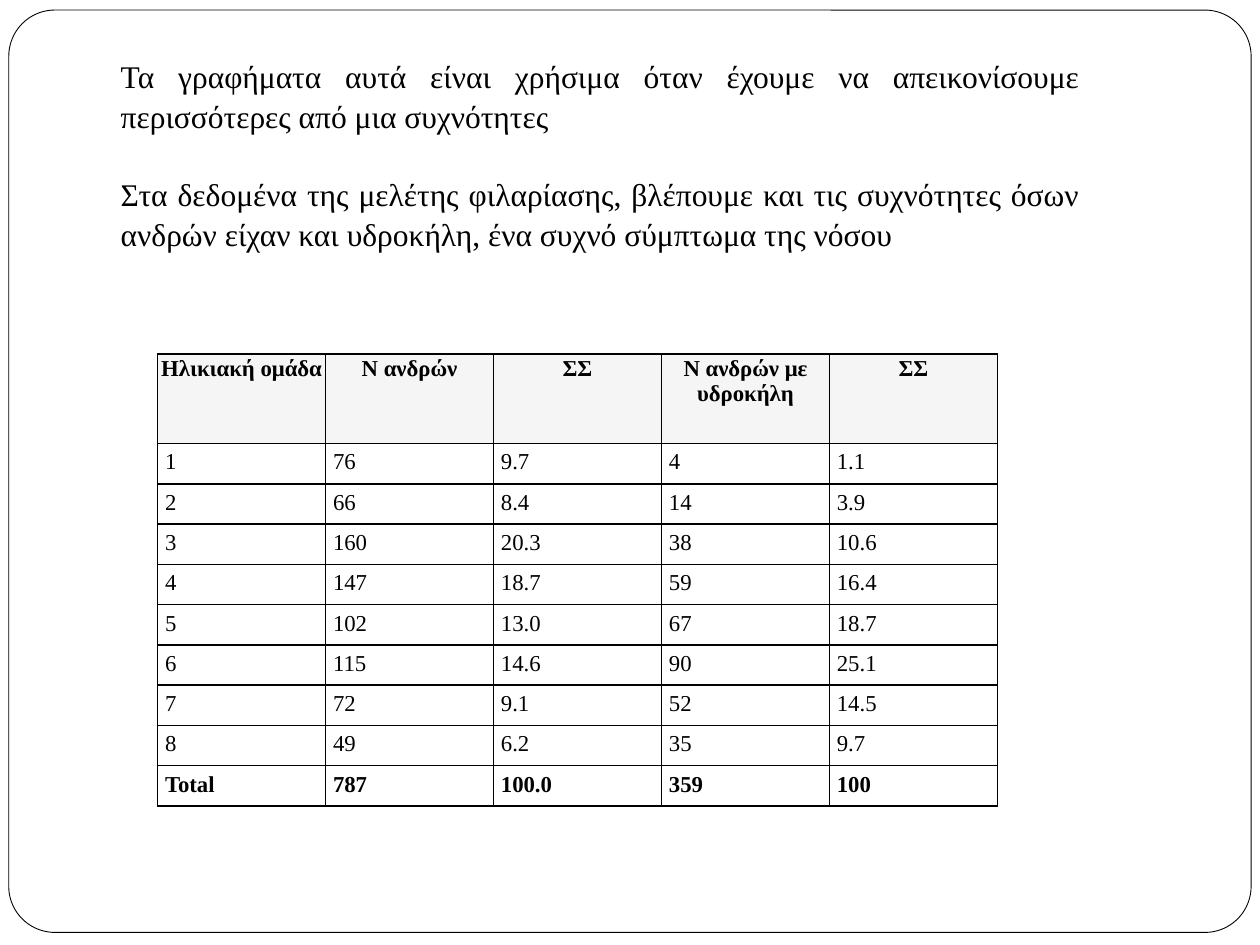
from lxml import etree
from pptx import Presentation, util as u
from pptx.dml.color import RGBColor
from pptx.enum import shapes, text
from pptx.oxml.ns import qn

INTRO = [
    "Τα γραφήματα αυτά είναι χρήσιμα όταν έχουμε να απεικονίσουμε περισσότερες από μια συχνότητες",
    "Στα δεδομένα της μελέτης φιλαρίασης, βλέπουμε και τις συχνότητες όσων ανδρών είχαν "
    "και υδροκήλη, ένα συχνό σύμπτωμα της νόσου",
]
ROWS = [
    ("Ηλικιακή ομάδα", "Ν ανδρών", "ΣΣ", "Ν ανδρών με υδροκήλη", "ΣΣ"),
    ("1", "76", "9.7", "4", "1.1"),
    ("2", "66", "8.4", "14", "3.9"),
    ("3", "160", "20.3", "38", "10.6"),
    ("4", "147", "18.7", "59", "16.4"),
    ("5", "102", "13.0", "67", "18.7"),
    ("6", "115", "14.6", "90", "25.1"),
    ("7", "72", "9.1", "52", "14.5"),
    ("8", "49", "6.2", "35", "9.7"),
    ("Total", "787", "100.0", "359", "100"),
]
FONT = "Times New Roman"
BLACK = RGBColor(0, 0, 0)
WHITE = RGBColor(0xFF, 0xFF, 0xFF)
HEADER_GREY = RGBColor(0xF5, 0xF5, 0xF5)

prs = Presentation()
prs.slide_width, prs.slide_height = u.Inches(10), u.Inches(7.5)
s = prs.slides.add_slide(prs.slide_layouts[6])


def write(p, content, size, bold=False, align=text.PP_ALIGN.LEFT, spacing=None, before=0):
    p.alignment = align
    p.line_spacing = spacing
    p.space_before = u.Pt(before)
    r = p.add_run()
    r.text = content
    r.font.name, r.font.size, r.font.bold = FONT, u.Pt(size), bold
    r.font.color.rgb = BLACK


def add_borders(cell, width=1):
    tcPr = cell._tc.get_or_add_tcPr()
    for i, side in enumerate(("lnL", "lnR", "lnT", "lnB")):
        ln = etree.Element(qn(f"a:{side}"), w=str(u.Pt(width)))
        fill = etree.SubElement(ln, qn("a:solidFill"))
        etree.SubElement(fill, qn("a:srgbClr"), val=str(BLACK))
        tcPr.insert(i, ln)


# Rounded frame
frame = s.shapes.add_shape(shapes.MSO_SHAPE.ROUNDED_RECTANGLE, u.Inches(0.07),
                           u.Inches(0.08), u.Inches(9.86), u.Inches(7.32))
frame.adjustments[0] = 0.05
frame.shadow.inherit = False
frame.fill.solid()
frame.fill.fore_color.rgb = WHITE
frame.line.color.rgb = BLACK
frame.line.width = u.Pt(0.5)

# Introductory paragraphs
tf = s.shapes.add_textbox(u.Inches(0.86), u.Inches(0.39),
                          u.Inches(7.81), u.Inches(1.62)).text_frame
tf.word_wrap = True
for i, line in enumerate(INTRO):
    p = tf.add_paragraph() if i else tf.paragraphs[0]
    write(p, line, 18, align=text.PP_ALIGN.JUSTIFY, spacing=1.05, before=22 * i)

# Frequency table
COL_W, HEADER_H, ROW_H = 4 / 3, 0.71, 0.32
n_rows, n_cols = len(ROWS), len(ROWS[0])
table = s.shapes.add_table(n_rows, n_cols, u.Inches(1.25), u.Inches(2.81),
                           u.Inches(COL_W * n_cols),
                           u.Inches(HEADER_H + ROW_H * (n_rows - 1))).table
for col in table.columns:
    col.width = u.Inches(COL_W)
for i, values in enumerate(ROWS):
    header, total = i == 0, i == n_rows - 1
    table.rows[i].height = u.Inches(HEADER_H if header else ROW_H)
    for j, value in enumerate(values):
        cell = table.cell(i, j)
        cell.margin_left = cell.margin_right = u.Inches(0.02 if header else 0.06)
        cell.margin_top = cell.margin_bottom = u.Inches(0.02 if header else 0.05)
        cell.fill.solid()
        cell.fill.fore_color.rgb = HEADER_GREY if header else WHITE
        add_borders(cell)
        write(cell.text_frame.paragraphs[0], value, 13, bold=header or total,
              align=text.PP_ALIGN.CENTER if header else text.PP_ALIGN.LEFT)

prs.save("out.pptx")
